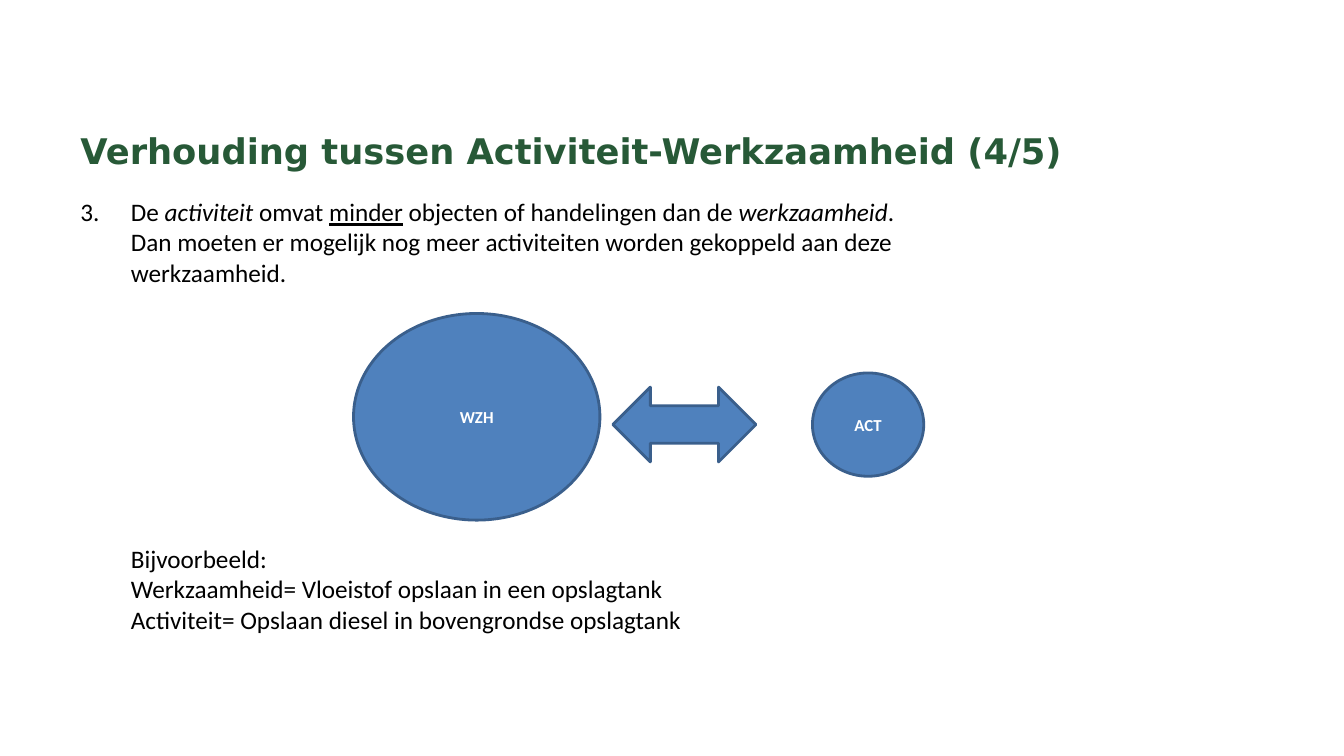
import pptx
import pptx.util
import pptx.dml.color
import pptx.enum.shapes
import pptx.enum.text
import pptx.oxml.ns
import lxml.etree

Pt = pptx.util.Pt
Shape = pptx.enum.shapes.MSO_SHAPE
Anchor = pptx.enum.text.MSO_ANCHOR
Align = pptx.enum.text.PP_ALIGN


def color(code):
    return pptx.dml.color.RGBColor.from_string(code)


def style(para, size, code, face="Calibri", bold=False):
    font = para.font
    font.name = face
    font.size = Pt(size)
    font.bold = bold
    font.color.rgb = color(code)


def add_box(slide, left, top, width, height):
    box = slide.shapes.add_textbox(Pt(left), Pt(top), Pt(width), Pt(height))
    box.text_frame.word_wrap = True
    return box.text_frame


def add_title(slide, text):
    frame = add_box(slide, 50.4, 85, 769, 44.6)
    frame.vertical_anchor = Anchor.MIDDLE
    para = frame.paragraphs[0]
    para.text = text
    style(para, 25.2, "275937", "DejaVu Sans", True)


def indent(para, start=None):
    props = para._p.get_or_add_pPr()
    props.set("marL", str(Pt(36)))
    props.set("indent", str(Pt(-36 if start else 0)))
    if start:
        tag = pptx.oxml.ns.qn("a:buAutoNum")
        lxml.etree.SubElement(props, tag, type="arabicPeriod", startAt=str(start))


def add_body(slide, lead, lines, gaps):
    frame = add_box(slide, 50.4, 136.8, 645.8, 322.6)
    para = frame.paragraphs[0]
    indent(para, 3)
    for text, mark in lead:
        run = para.add_run()
        run.text = text
        if mark == "i":
            run.font.italic = True
        elif mark == "u":
            run.font.underline = True
    style(para, 18, "000000")
    for text, gap in zip(lines, gaps):
        para = frame.add_paragraph()
        para.text = text
        indent(para)
        para.space_before = Pt(gap)
        style(para, 18, "000000")


def add_form(slide, kind, left, top, width, height, text=""):
    form = slide.shapes.add_shape(kind, Pt(left), Pt(top), Pt(width), Pt(height))
    form.shadow.inherit = False
    form.fill.solid()
    form.fill.fore_color.rgb = color("4F81BD")
    form.line.color.rgb = color("3A5F8C")
    form.line.width = Pt(2)
    if text:
        frame = form.text_frame
        frame.vertical_anchor = Anchor.MIDDLE
        para = frame.paragraphs[0]
        para.text = text
        para.alignment = Align.CENTER
        style(para, 12, "FFFFFF", bold=True)


def main():
    deck = pptx.Presentation()
    deck.slide_width = Pt(960)
    deck.slide_height = Pt(540)
    slide = deck.slides.add_slide(deck.slide_layouts[6])
    lead = [
        ("De ", ""),
        ("activiteit", "i"),
        (" omvat ", ""),
        ("minder", "u"),
        (" objecten of handelingen dan de ", ""),
        ("werkzaamheid", "i"),
        (".", ""),
    ]
    lines = [
        "Dan moeten er mogelijk nog meer activiteiten worden gekoppeld aan deze werkzaamheid.",
        "Bijvoorbeeld:",
        "Werkzaamheid= Vloeistof opslaan in een opslagtank",
        "Activiteit= Opslaan diesel in bovengrondse opslagtank",
    ]
    add_body(slide, lead, lines, [0, 183, 0, 0])
    add_title(slide, "Verhouding tussen Activiteit-Werkzaamheid (4/5)")
    add_form(slide, Shape.OVAL, 580.3, 266.4, 79.5, 73.8, "ACT")
    add_form(slide, Shape.OVAL, 252.5, 223.9, 176, 147.6, "WZH")
    add_form(slide, Shape.LEFT_RIGHT_ARROW, 437.8, 276.5, 102.2, 53.5)
    deck.save("out.pptx")


if __name__ == "__main__":
    main()
